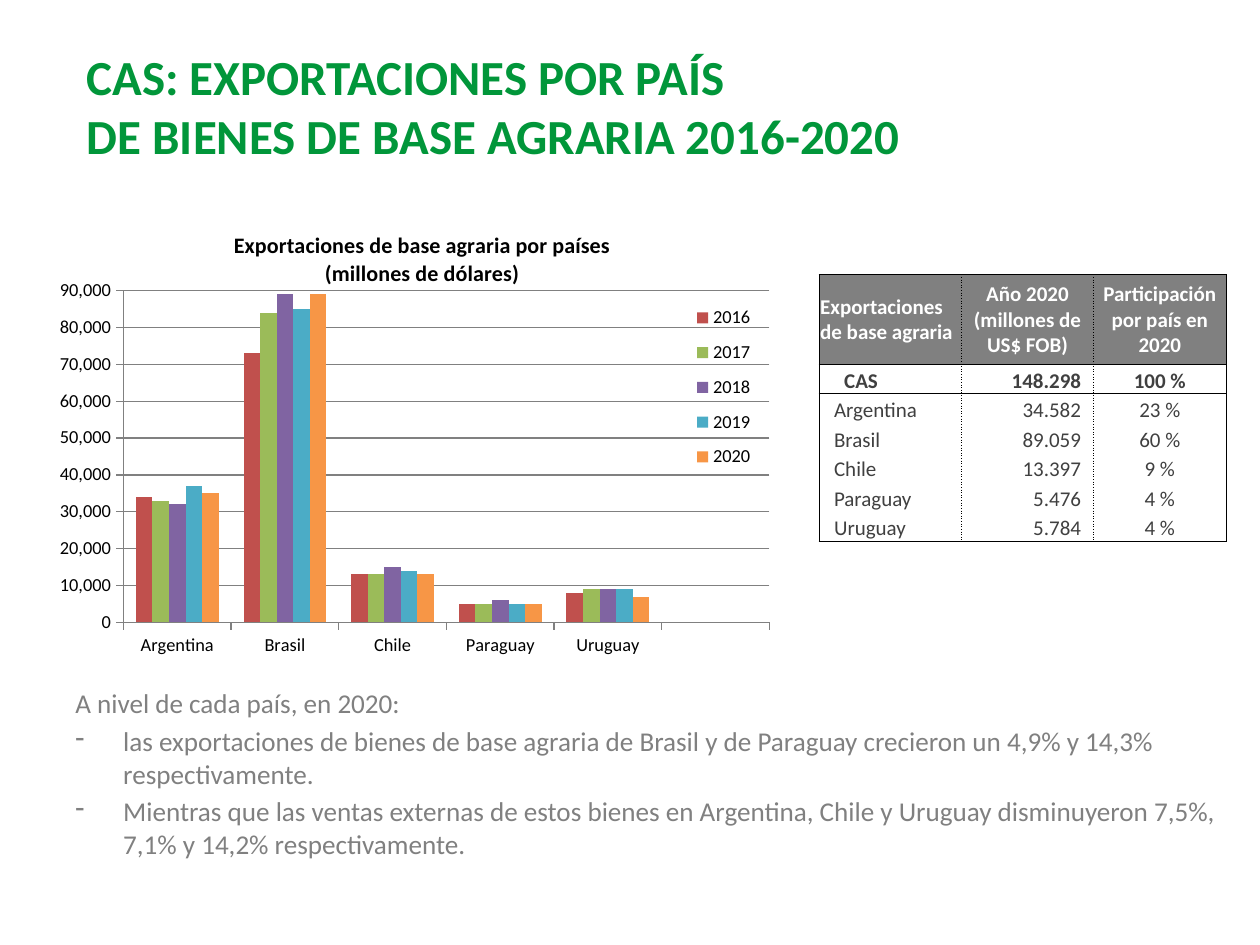
from lxml import etree
from pptx import Presentation, util as u
from pptx.chart.data import CategoryChartData
from pptx.dml.color import RGBColor
from pptx.enum import chart as ch, text as tx
from pptx.oxml import parse_xml
from pptx.oxml.ns import qn

FONT = "Calibri"
COLORS = {"title": "01963A", "gray": "808080", "dark": "404040",
          "black": "000000", "white": "FFFFFF"}
YEARS = {
    "2016": ("C0504D", (34000, 73000, 13000, 5000, 8000)),
    "2017": ("9BBB59", (33000, 84000, 13000, 5000, 9000)),
    "2018": ("8064A2", (32000, 89000, 15000, 6000, 9000)),
    "2019": ("4BACC6", (37000, 85000, 14000, 5000, 9000)),
    "2020": ("F79646", (35000, 89000, 13000, 5000, 7000)),
}
LANDS = ["Argentina", "Brasil", "Chile", "Paraguay", "Uruguay"]
ROWS = [
    ("Exportaciones de base agraria", "Año 2020\v(millones de US$ FOB)",
     "Participación por país en 2020"),
    ("CAS", "148.298", "100 %"),
    ("Argentina", "34.582", "23 %"),
    ("Brasil", "89.059", "60 %"),
    ("Chile", "13.397", "9 %"),
    ("Paraguay", "5.476", "4 %"),
    ("Uruguay", "5.784", "4 %"),
]
NOTES = [
    "A nivel de cada país, en 2020:",
    "las exportaciones de bienes de base agraria de Brasil y de Paraguay "
    "crecieron un 4,9% y 14,3% respectivamente.",
    "Mientras que las ventas externas de estos bienes en Argentina, Chile y "
    "Uruguay disminuyeron 7,5%, 7,1% y 14,2% respectivamente.",
]


def rgb(name):
    return RGBColor.from_string(COLORS.get(name, name))


def style(font, size, color, bold=False):
    font.name, font.size, font.bold = FONT, u.Pt(size), bold
    font.color.rgb = rgb(color)


def add_text(slide, box, lines, anchor):
    frame = slide.shapes.add_textbox(*map(u.Inches, box)).text_frame
    frame.word_wrap = True
    frame.vertical_anchor = anchor
    frame.text = "\n".join(lines)
    return frame


def add_title(slide, box):
    frame = add_text(slide, box, ["CAS: EXPORTACIONES POR PAÍS\v"
                                  "DE BIENES DE BASE AGRARIA 2016-2020"],
                     tx.MSO_ANCHOR.MIDDLE)
    for run in frame.paragraphs[0].runs:
        style(run.font, 28, "title", True)


def add_notes(slide, box):
    frame = add_text(slide, box, NOTES, tx.MSO_ANCHOR.TOP)
    for i, par in enumerate(frame.paragraphs):
        if i:
            par.space_before = u.Pt(3)
            props = par._p.get_or_add_pPr()
            props.set("marL", str(u.Inches(0.38)))
            props.set("indent", str(-u.Inches(0.38)))
            etree.SubElement(props, qn("a:buChar")).set("char", "-")
        for run in par.runs:
            style(run.font, 15.5, "gray")


def set_place(owner, spot, inner=False):
    """Fix the place of a chart part as shares of the chart's size."""
    ns = "http://schemas.openxmlformats.org/drawingml/2006/chart"
    target = '<c:layoutTarget val="inner"/>' if inner else ""
    modes = '<c:xMode val="edge"/><c:yMode val="edge"/>'
    sizes = "".join(f'<c:{k} val="{v}"/>' for k, v in zip("xywh", spot))
    node = parse_xml(f'<c:layout xmlns:c="{ns}"><c:manualLayout>'
                     f"{target}{modes}{sizes}</c:manualLayout></c:layout>")
    for old in owner.findall(qn("c:layout")):
        owner.remove(old)
    if inner:
        owner.insert(0, node)
    else:
        owner.find(qn("c:legendPos")).addnext(node)


def add_bars(slide, box):
    data = CategoryChartData(number_format="#,##0")
    data.categories = LANDS + [""]
    for year, (_, vals) in YEARS.items():
        data.add_series(year, vals + (None,))
    chart = slide.shapes.add_chart(ch.XL_CHART_TYPE.COLUMN_CLUSTERED,
                                   *map(u.Inches, box), data).chart
    style(chart.font, 10.5, "black")

    # Title
    chart.has_title = True
    frame = chart.chart_title.text_frame
    frame.text = "Exportaciones de base agraria por países\n(millones de dólares)"
    for par in frame.paragraphs:
        style(par.runs[0].font, 12.6, "black", True)

    # Bars
    plot = chart.plots[0]
    plot.gap_width, plot.overlap, plot.vary_by_categories = 150, 0, False
    for bar, (color, _) in zip(plot.series, YEARS.values()):
        bar.format.fill.solid()
        bar.format.fill.fore_color.rgb = rgb(color)

    # Axes
    axis = chart.value_axis
    axis.minimum_scale, axis.maximum_scale, axis.major_unit = 0, 90000, 10000
    axis.tick_labels.number_format = "#,##0"
    axis.tick_labels.number_format_is_linked = False
    axis.has_major_gridlines = True
    for side in (axis, chart.category_axis):
        side.major_tick_mark = ch.XL_TICK_MARK.OUTSIDE
    for part in (axis, axis.major_gridlines, chart.category_axis):
        part.format.line.color.rgb = rgb("gray")
        part.format.line.width = u.Pt(0.75)

    # Legend over the plot
    chart.has_legend = True
    chart.legend.position = ch.XL_LEGEND_POSITION.RIGHT
    chart.legend.include_in_layout = False
    set_place(chart.legend._element, (0.83, 0.18, 0.12, 0.4))
    area = chart._chartSpace.chart.plotArea
    set_place(area, (0.114, 0.172, 0.835, 0.712), True)


def set_edges(cell, edges):
    """Draw thin cell edges; edges maps L, R, T, B to a dash name."""
    props = cell._tc.get_or_add_tcPr()
    for i, (side, dash) in enumerate(edges.items()):
        line = etree.Element(qn(f"a:ln{side}"), w=str(u.Pt(0.5 if dash else 0)))
        if dash:
            fill = etree.SubElement(line, qn("a:solidFill"))
            etree.SubElement(fill, qn("a:srgbClr"), val=COLORS["black"])
            etree.SubElement(line, qn("a:prstDash"), val=dash)
        else:
            etree.SubElement(line, qn("a:noFill"))
        props.insert(i, line)


def add_grid(slide, box):
    shape = slide.shapes.add_table(len(ROWS), 3, *map(u.Inches, box))
    table = shape.table
    table.first_row = table.horz_banding = False
    for col, wide in zip(table.columns, (1.13, 1.05, 1.05)):
        col.width = u.Inches(wide)
    aligns = (tx.PP_ALIGN.LEFT, tx.PP_ALIGN.RIGHT, tx.PP_ALIGN.CENTER)
    last = len(ROWS) - 1
    for r, row in enumerate(ROWS):
        head = r == 0
        table.rows[r].height = u.Inches(0.71 if head else 0.235)
        for c, words in enumerate(row):
            cell = table.cell(r, c)
            cell.text = words
            cell.vertical_anchor = (tx.MSO_ANCHOR.MIDDLE if head
                                    else tx.MSO_ANCHOR.BOTTOM)
            left = 0.01 if head or c else 0.2 if r == 1 else 0.12
            right = 0.1 if c == 1 and not head else 0.01
            cell.margin_left, cell.margin_right = u.Inches(left), u.Inches(right)
            cell.margin_top, cell.margin_bottom = u.Inches(0.01), 0
            cell.fill.solid()
            cell.fill.fore_color.rgb = rgb("gray" if head else "white")
            par = cell.text_frame.paragraphs[0]
            par.alignment = tx.PP_ALIGN.CENTER if head and c else aligns[c]
            for run in par.runs:
                style(run.font, 12, "white" if head else "dark", r < 2)
            set_edges(cell, {"L": "sysDot" if c else "solid",
                             "R": "sysDot" if c < 2 else "solid",
                             "T": "solid" if r < 3 else None,
                             "B": "solid" if r < 2 or r == last else None})


def main():
    deck = Presentation()
    deck.slide_width, deck.slide_height = u.Inches(10), u.Inches(7.5)
    slide = deck.slides.add_slide(deck.slide_layouts[6])
    add_title(slide, (0.59, 0.29, 9.41, 1.1))
    add_notes(slide, (0.5, 5.4, 9.47, 1.34))
    add_bars(slide, (0.28, 1.67, 6.14, 3.7))
    add_grid(slide, (6.5, 2.18, 3.23, 2.13))
    deck.save("out.pptx")


if __name__ == "__main__":
    main()
